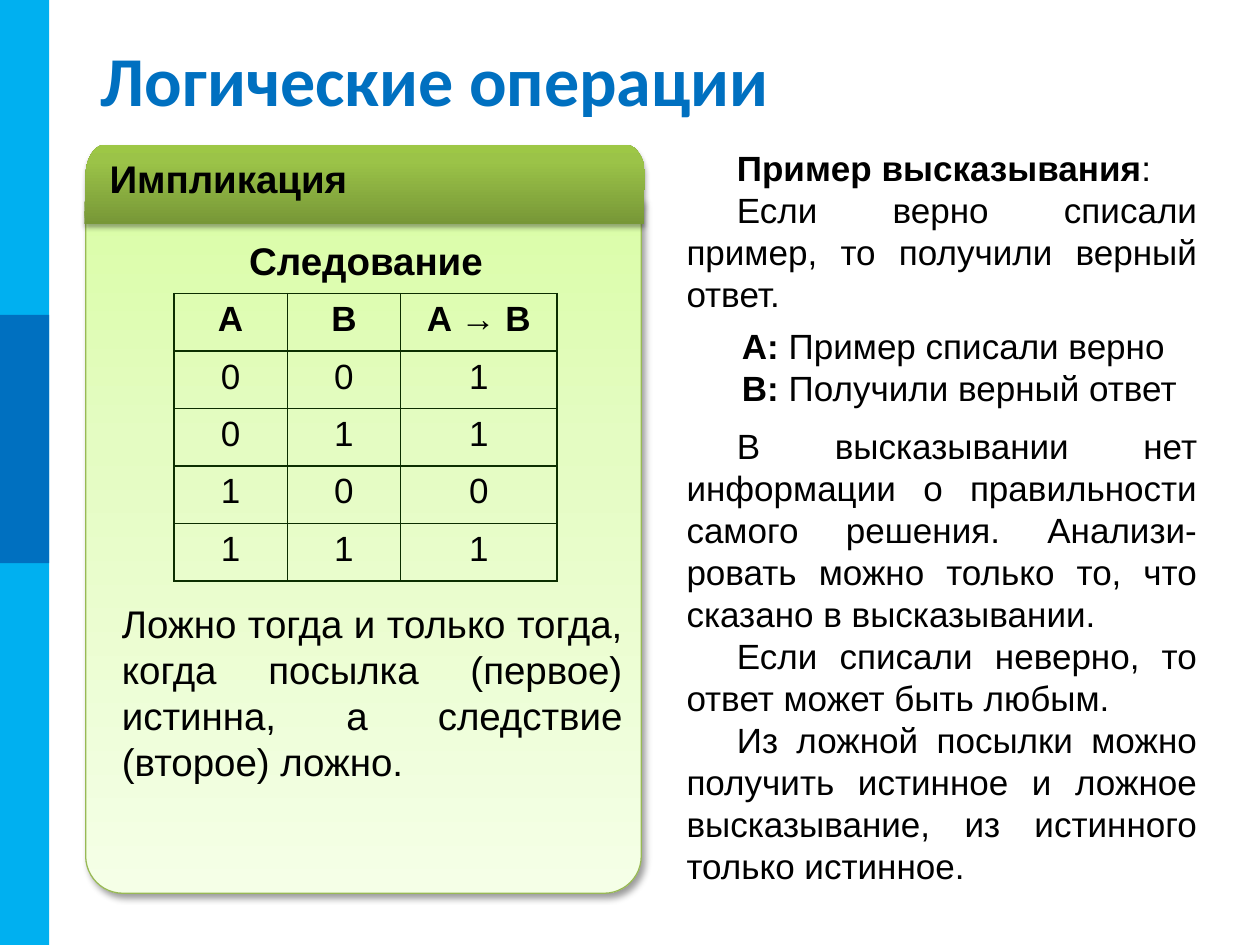
import pptx
import pptx.util
import pptx.dml.color
import pptx.enum.shapes
import pptx.enum.text
import pptx.oxml.ns
import lxml.etree

RGB = pptx.dml.color.RGBColor
SKY = RGB(0x00, 0xB0, 0xF0)
BLUE = RGB(0x00, 0x70, 0xC0)
BLACK = RGB(0, 0, 0)
OLIVE = RGB(0x98, 0xB9, 0x55)
DARK_GREEN = RGB(0x0C, 0x2E, 0x00)
PANEL_STOPS = [(0, RGB(0xDA, 0xFD, 0xA7)), (35, RGB(0xE4, 0xFC, 0xC2)), (100, RGB(0xF5, 0xFF, 0xE7))]
HEADER_STOPS = [(0, RGB(0x77, 0x97, 0x37)), (80, RGB(0x9B, 0xC3, 0x48)), (100, RGB(0x9D, 0xC7, 0x46))]

Pt = pptx.util.Pt
Align = pptx.enum.text.PP_ALIGN
Anchor = pptx.enum.text.MSO_ANCHOR
Shape = pptx.enum.shapes.MSO_SHAPE
qn = pptx.oxml.ns.qn
add = lxml.etree.SubElement

deck = pptx.Presentation()
deck.slide_width = pptx.util.Inches(10)
deck.slide_height = pptx.util.Inches(7.5)
COLUMN = deck.slide_width / 100
ROW = deck.slide_height / 75
slide = deck.slides.add_slide(deck.slide_layouts[5])


def grid(left, top, width, height):
    return [round(n * unit) for n, unit in zip((left, top, width, height), (COLUMN, ROW, COLUMN, ROW))]


def write(frame, paragraphs, size, align, indent=0, name="Arial", color=BLACK):
    for number, runs in enumerate(paragraphs):
        paragraph = frame.add_paragraph() if number else frame.paragraphs[0]
        paragraph.alignment = align
        if indent:
            paragraph._p.get_or_add_pPr().set("indent", str(round(indent * COLUMN)))
        for text, bold in runs:
            run = paragraph.add_run()
            run.text = text
            for key, value in {"size": Pt(size), "name": name, "bold": bold}.items():
                setattr(run.font, key, value)
            run.font.color.rgb = color


for top, height, color in [(0, 75, SKY), (25, 19.7, BLUE)]:
    stripe = slide.shapes.add_shape(Shape.RECTANGLE, *grid(0, top, 3.9, height))
    stripe.shadow.inherit = False
    stripe.fill.solid()
    stripe.fill.fore_color.rgb = color
    stripe.line.fill.background()

heading = slide.shapes.title
heading.left, heading.top, heading.width, heading.height = grid(7, 3, 90.2, 6.4)
heading.text_frame.vertical_anchor = Anchor.MIDDLE
write(heading.text_frame, [[("Логические операции", True)]], 40, Align.LEFT, name="Calibri", color=BLUE)

card = slide.shapes.add_group_shape()
panel = card.shapes.add_shape(Shape.ROUND_2_SAME_RECTANGLE, *grid(6.8, 15.8, 44.1, 55.1))
panel.adjustments[0] = 0.067
panel._element.spPr.find(qn("a:xfrm")).set("flipV", "1")
panel.line.color.rgb = OLIVE
panel.line.width = Pt(0.75)

STEPS = 12
corner = []
for step in range(STEPS + 1):
    t = step / STEPS
    weights = ((1 - t) ** 3, 3 * t * (1 - t) ** 2, 3 * t * t * (1 - t), t ** 3)
    corner.append([100 * sum(w * p for w, p in zip(weights, points))
                   for points in ((6.8, 6.8, 7.5, 8.3), (13.9, 12.6, 11.5, 11.5))])
mirrored = [(5800 - x, y) for x, y in reversed(corner)]
outline = card.shapes.build_freeform(*corner[0], scale=COLUMN / 100)
outline.add_line_segments(corner[1:] + mirrored + [(5110, 1780), (670, 1780)])
header = outline.convert_to_shape()
header.line.fill.background()

for part, stops, opacity, blur, distance, angle in [
    (panel, PANEL_STOPS, 40, 4, 3, 45),
    (header, HEADER_STOPS, 35, 3.1, 1.8, 90),
]:
    part.fill.gradient()
    part.fill.gradient_angle = 90
    stop_list = part._element.spPr.find(qn("a:gradFill")).find(qn("a:gsLst"))
    for old_stop in list(stop_list):
        stop_list.remove(old_stop)
    for position, color in stops:
        stop = add(stop_list, qn("a:gs"), pos=str(position * 1000))
        add(stop, qn("a:srgbClr"), val=str(color))
    part.shadow.inherit = False
    shade = add(part._element.spPr.find(qn("a:effectLst")), qn("a:outerShdw"),
                blurRad=str(Pt(blur)), dist=str(Pt(distance)), dir=str(angle * 60000),
                algn="tl", rotWithShape="0")
    add(add(shade, qn("a:srgbClr"), val=str(BLACK)), qn("a:alpha"), val=str(opacity * 1000))

for key, value in {"margin_left": round(2 * COLUMN), "margin_top": round(0.4 * ROW),
                   "margin_right": round(0.9 * COLUMN), "margin_bottom": round(0.9 * ROW),
                   "vertical_anchor": Anchor.MIDDLE, "word_wrap": True}.items():
    setattr(header.text_frame, key, value)
write(header.text_frame, [[("Импликация", True)]], 22, Align.LEFT)
header.text_frame.paragraphs[0].line_spacing = 0.9

truth_rows = ["A", "B", "A → B"], "001", "011", "100", "111"
truth = slide.shapes.add_table(len(truth_rows), 3, *grid(13.8, 23.3, 30.4, 22.8)).table
truth.first_row = truth.horz_banding = False
for column, width in zip(truth.columns, (9, 9, 12.4)):
    column.width = round(width * COLUMN)
for r, values in enumerate(truth_rows):
    for c, value in enumerate(values):
        cell = truth.cell(r, c)
        write(cell.text_frame, [[(value, r == 0)]], 20, Align.CENTER)
        properties = cell._tc.get_or_add_tcPr()
        for side in ("a:lnL", "a:lnR", "a:lnT", "a:lnB"):
            border = add(properties, qn(side), w=str(Pt(1)))
            add(add(border, qn("a:solidFill")), qn("a:srgbClr"), val=str(DARK_GREEN))
        cell.fill.background()

for place, size, align, indent, paragraphs in [
    ((8.7, 47.1, 41.7, 15.8), 22, Align.JUSTIFY, 0, [
        [("Ложно тогда и только тогда, когда посылка (первое) истинна, а следствие (второе) ложно.", False)]]),
    ((8.4, 18.3, 41.3, 4.7), 22, Align.CENTER, 0, [[("Следование", True)]]),
    ((53.5, 11.1, 42.5, 14.5), 20, Align.JUSTIFY, 4, [
        [("Пример высказывания", True), (": ", False)],
        [("Если верно списали пример, то получили верный ответ.", False)]]),
    ((57.9, 25.3, 37.8, 7.7), 20, Align.JUSTIFY, 0, [
        [("A: ", True), ("Пример списали верно", False)],
        [("B: ", True), ("Получили верный ответ", False)]]),
    ((53.5, 33.2, 42.5, 38), 20, Align.JUSTIFY, 4, [
        [("В высказывании нет информации о правильности самого решения. Анализи-ровать можно "
          "только то, что сказано в высказывании. ", False)],
        [("Если списали неверно, то ответ может быть любым. ", False)],
        [("Из ложной посылки можно получить истинное и ложное высказывание, "
          "из истинного только истинное.", False)]]),
]:
    passage = slide.shapes.add_textbox(*grid(*place)).text_frame
    passage.word_wrap = True
    passage.auto_size = pptx.enum.text.MSO_AUTO_SIZE.SHAPE_TO_FIT_TEXT
    write(passage, paragraphs, size, align, indent)

deck.save("out.pptx")
